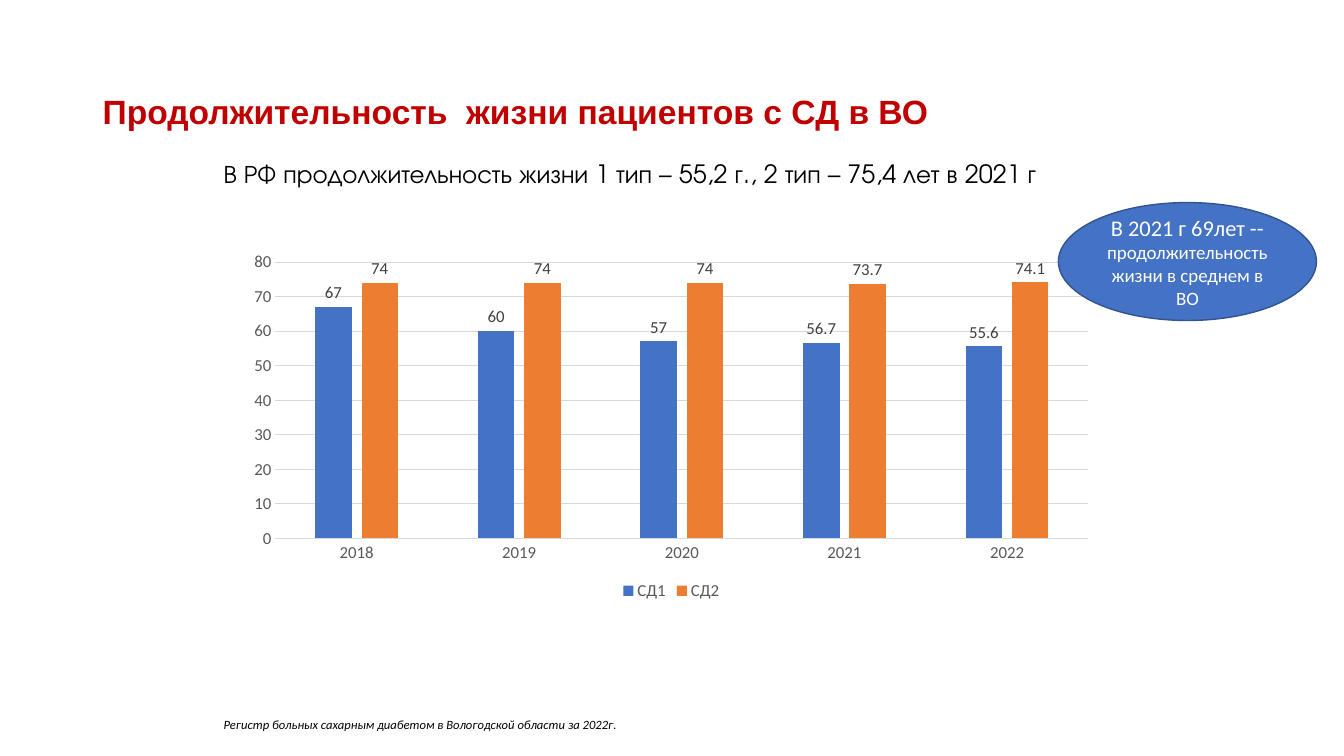
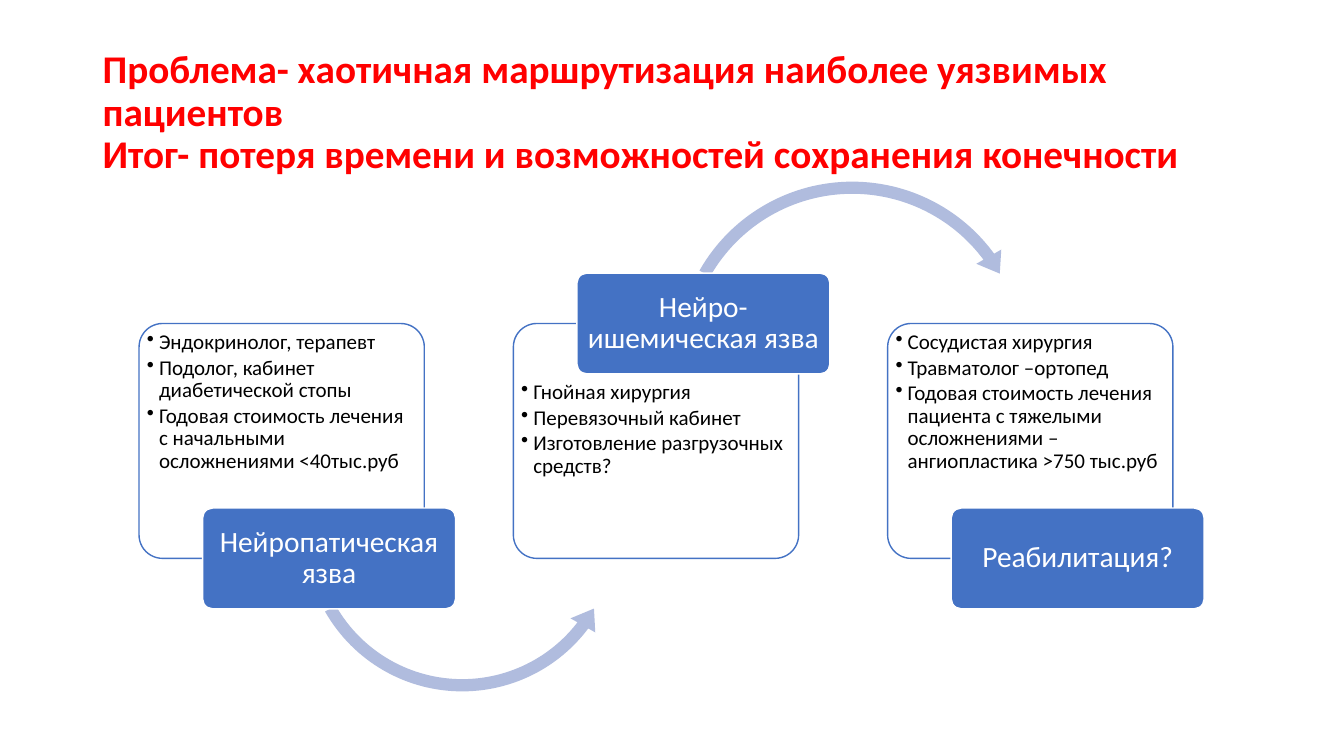
from lxml import etree
from pptx import Presentation
from pptx import util as u
from pptx.chart.data import CategoryChartData
from pptx.dml.color import RGBColor
from pptx.enum import chart as charts, shapes, text
from pptx.oxml.ns import qn

BLUE, ORANGE, PALE_BLUE, DARK_BLUE = "4472C4", "ED7D31", "B0BCDE", "325491"
DARK_RED, RED = "C00000", "FF0000"
BLACK, WHITE, GRID_GREY = "000000", "FFFFFF", "D9D9D9"
AXIS_GREY, LABEL_GREY = "595959", "404040"
FONT = "Calibri"
TITLE_AREA = (2.76, 1.6, 34.5, 5.8)
rgb = RGBColor.from_string

presentation = Presentation()
presentation.slide_width, presentation.slide_height = u.Inches(13.33), u.Inches(7.5)
column = presentation.slide_width / 40
row = presentation.slide_height / 30
blank = presentation.slide_layouts[6]


def add_box(slide, area, kind=None, fill=None, line=None, margins=(0.1, 0.05),
            anchor=text.MSO_ANCHOR.TOP):
    """Add a preset shape, or a text box without a kind; area is in columns and rows."""
    left, top, width, height = area
    frame = [int(left * column), int(top * row), int(width * column), int(height * row)]
    if kind is None:
        shape = slide.shapes.add_textbox(*frame)
    else:
        shape = slide.shapes.add_shape(kind, *frame)
        shape.shadow.inherit = False
        shape.fill.solid()
        shape.fill.fore_color.rgb = rgb(fill)
        if line:
            shape.line.color.rgb = rgb(line)
            shape.line.width = u.Pt(1)
        else:
            shape.line.fill.background()
    body = shape.text_frame
    body.word_wrap = True
    body.vertical_anchor = anchor
    body.margin_left = body.margin_right = u.Inches(margins[0])
    body.margin_top = body.margin_bottom = u.Inches(margins[1])
    return shape


def write(shape, words, size, color=BLACK, font=FONT, bold=False, italic=False,
          align=text.PP_ALIGN.LEFT, spacing=1.0, after=0, bullet=False):
    """Append one paragraph to the shape."""
    body = shape.text_frame
    paragraph = body.add_paragraph() if body.text else body.paragraphs[0]
    paragraph.text = words
    paragraph.alignment = align
    paragraph.line_spacing = spacing
    paragraph.space_after = u.Pt(after)
    if bullet:
        properties = paragraph._p.get_or_add_pPr()
        properties.set("marL", str(u.Inches(0.12)))
        properties.set("indent", str(-u.Inches(0.12)))
        etree.SubElement(properties, qn("a:buChar")).set("char", "•")
    for run in paragraph.runs:
        run.font.size, run.font.name = u.Pt(size), font
        run.font.bold, run.font.italic = bold, italic
        run.font.color.rgb = rgb(color)


# Life expectancy
slide = presentation.slides.add_slide(blank)
title = add_box(slide, TITLE_AREA, anchor=text.MSO_ANCHOR.MIDDLE)
write(title, "Продолжительность  жизни пациентов с СД в ВО", 24, color=DARK_RED,
      font="Arial", bold=True, spacing=0.9)

chart_data = CategoryChartData()
chart_data.categories = ["2018", "2019", "2020", "2021", "2022"]
chart_data.add_series("СД1", [67, 60, 57, 56.7, 55.6])
chart_data.add_series("СД2", [74, 74, 74, 73.7, 74.1])
chart = slide.shapes.add_chart(
    charts.XL_CHART_TYPE.COLUMN_CLUSTERED, int(7.05 * column), int(9.72 * row),
    int(25.86 * column), int(14.28 * row), chart_data).chart
chart.has_title = False
chart.font.size, chart.font.name = u.Pt(12), FONT
chart.font.color.rgb = rgb(AXIS_GREY)
chart.has_legend = True
chart.legend.position = charts.XL_LEGEND_POSITION.BOTTOM
chart.legend.include_in_layout = False

years, values = chart.category_axis, chart.value_axis
values.minimum_scale, values.maximum_scale, values.major_unit = 0, 80, 10
values.has_major_gridlines = True
for axis in (years, values):
    axis.major_tick_mark = axis.minor_tick_mark = charts.XL_TICK_MARK.NONE
for line_format in (years.format.line, values.major_gridlines.format.line):
    line_format.color.rgb = rgb(GRID_GREY)
    line_format.width = u.Pt(0.75)
values.format.line.fill.background()

plot = chart.plots[0]
plot.vary_by_categories = False
plot.gap_width, plot.overlap = 219, -27
for series, color in zip(plot.series, (BLUE, ORANGE)):
    series.format.fill.solid()
    series.format.fill.fore_color.rgb = rgb(color)
    labels = series.data_labels
    labels.show_value = True
    labels.position = charts.XL_LABEL_POSITION.OUTSIDE_END
    labels.font.size, labels.font.name = u.Pt(12), FONT
    labels.font.color.rgb = rgb(LABEL_GREY)

callout = add_box(slide, (31.5, 8.04, 7.68, 4.68), shapes.MSO_SHAPE.OVAL, BLUE, DARK_BLUE,
                  anchor=text.MSO_ANCHOR.MIDDLE)
for words, size in (("В 2021 г 69лет --", 16),
                    ("продолжительность жизни в среднем в ВО", 13.5)):
    write(callout, words, size, color=WHITE, align=text.PP_ALIGN.CENTER)

footnote = add_box(slide, (6.36, 28.24, 28.38, 1))
write(footnote, "Регистр больных сахарным диабетом в Вологодской области за 2022г.", 9,
      italic=True)
subtitle = add_box(slide, (6.36, 6.08, 26.58, 1.6))
write(subtitle, "В РФ продолжительность жизни 1 тип – 55,2 г., 2 тип – 75,4 лет в 2021 г", 18,
      font="TeX Gyre Adventor")

# Patient routing
slide = presentation.slides.add_slide(blank)
title = add_box(slide, TITLE_AREA, anchor=text.MSO_ANCHOR.MIDDLE)
write(title, "Проблема- хаотичная маршрутизация наиболее уязвимых пациентов\v"
      "Итог- потеря времени и возможностей сохранения конечности", 28, color=RED,
      bold=True, spacing=0.9)

LABEL_ABOVE, LABEL_BELOW = 10.84, 20.16
stages = [
    ("Нейропатическая язва", LABEL_BELOW,
     ["Эндокринолог, терапевт", "Подолог, кабинет диабетической стопы",
      "Годовая стоимость лечения с начальными осложнениями <40тыс.руб"]),
    ("Нейро-ишемическая язва", LABEL_ABOVE,
     ["Гнойная хирургия", "Перевязочный кабинет", "Изготовление разгрузочных средств?"]),
    ("Реабилитация?", LABEL_BELOW,
     ["Сосудистая хирургия", "Травматолог –ортопед",
      "Годовая стоимость лечения пациента с тяжелыми осложнениями –"
      "ангиопластика >750 тыс.руб"]),
]
arrows = [
    (shapes.MSO_SHAPE.LEFT_CIRCULAR_ARROW, (8.82, 14.6, 9.87, 13.16),
     (0.037, 4.574, 22.329, 90.245, 0.043)),
    (shapes.MSO_SHAPE.CIRCULAR_ARROW, (19.89, 6.88, 10.95, 14.6),
     (0.033, 4.086, 194.159, 125.755, 0.039)),
]
for kind, area, adjustments in arrows:
    arrow = add_box(slide, area, kind, PALE_BLUE)
    for index, value in enumerate(adjustments):
        arrow.adjustments[index] = value

for index, (name, label_top, items) in enumerate(stages):
    left = 4.14 + index * 11.14
    card = add_box(slide, (left, 12.84, 8.49, 9.32), shapes.MSO_SHAPE.ROUNDED_RECTANGLE,
                   WHITE, BLUE, margins=(0.01, 0.01))
    if label_top == LABEL_ABOVE:
        card.text_frame.margin_top = u.Inches(0.51)
    for item in items:
        write(card, item, 15, spacing=0.9, after=2, bullet=True)
    label = add_box(slide, (left + 1.89, label_top, 7.53, 4),
                    shapes.MSO_SHAPE.ROUNDED_RECTANGLE, BLUE, WHITE, margins=(0.04, 0.03),
                    anchor=text.MSO_ANCHOR.MIDDLE)
    write(label, name, 21, color=WHITE, align=text.PP_ALIGN.CENTER, spacing=0.9)
    for box in (card, label):
        box.adjustments[0] = 0.1

presentation.save("out.pptx")
